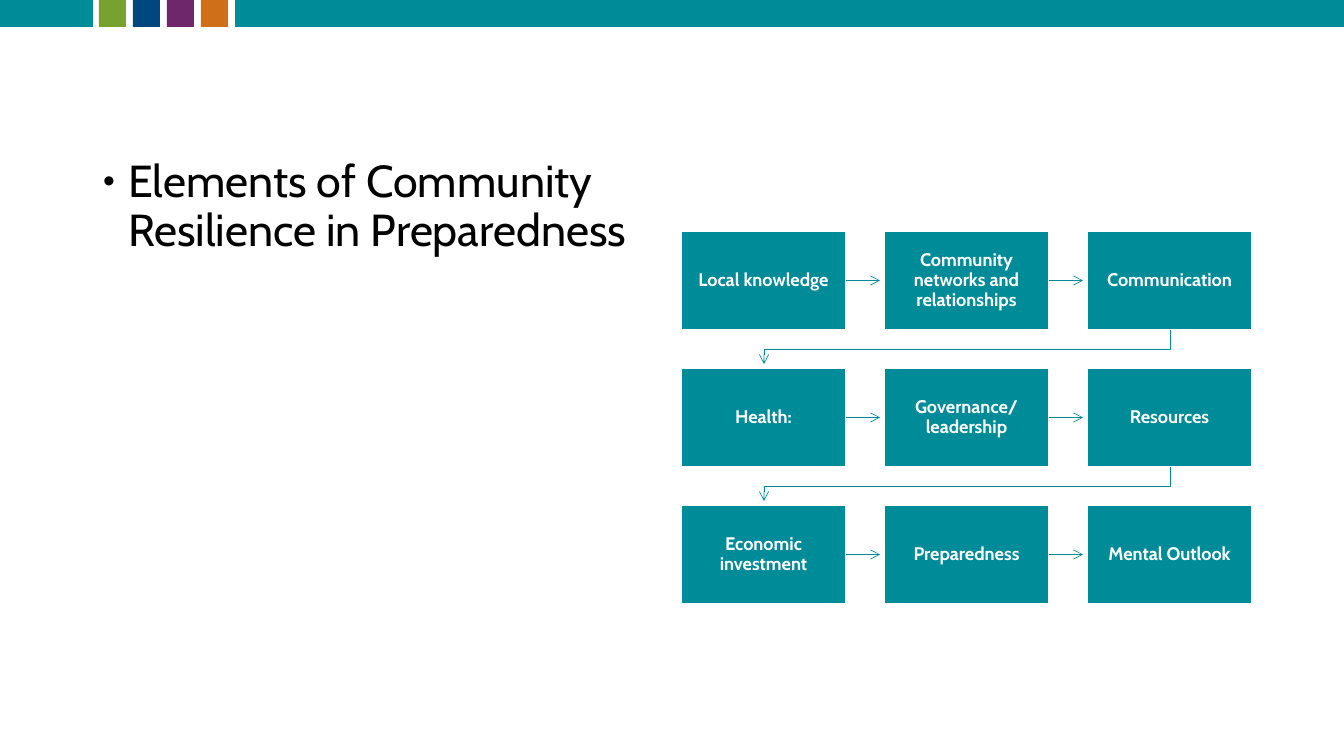
from lxml import etree
from pptx import Presentation
from pptx import util as u
from pptx.dml.color import RGBColor
from pptx.enum import shapes, text
from pptx.oxml.ns import qn

EMU_PER_PX = 914400 / 100.8
SLIDE_W, SLIDE_H = 1344, 756
FONT = "Cabin"
COLORS = {
    "teal": "008B99", "green": "78A22F", "blue": "00467F",
    "purple": "6D276A", "orange": "D06F1A", "white": "FFFFFF", "black": "000000",
}
ELEMENTS = [
    ["Local knowledge", "Community networks and relationships", "Communication"],
    ["Health:", "Governance/ leadership", "Resources"],
    ["Economic investment", "Preparedness", "Mental Outlook"],
]


def px(n):
    return u.Emu(round(n * EMU_PER_PX))


def rgb(name):
    return RGBColor.from_string(COLORS[name])


def set_font(paragraph, size, color, bold=False):
    for run in paragraph.runs:
        run.font.name = FONT
        run.font.size = u.Pt(size)
        run.font.bold = bold
        run.font.color.rgb = rgb(color)


def add_rect(slide, x, y, w, h, color):
    rect = slide.shapes.add_shape(shapes.MSO_SHAPE.RECTANGLE, px(x), px(y), px(w), px(h))
    rect.shadow.inherit = False
    rect.fill.solid()
    rect.fill.fore_color.rgb = rgb(color)
    rect.line.fill.background()
    return rect


def style_arrow(arrow):
    arrow.line.color.rgb = rgb("teal")
    arrow.line.width = u.Pt(0.5)
    props = arrow._element.spPr
    etree.SubElement(props.find(qn("a:ln")), qn("a:tailEnd"), type="arrow")
    etree.SubElement(props, qn("a:effectLst"))


def add_top_band(slide, x, y, w, h):
    # Teal ends with four coloured tiles between them
    lead, gap = 93, 7
    add_rect(slide, x, y, lead, h, "teal")
    tile_x = x + lead + gap - 1
    for color in ("green", "blue", "purple", "orange"):
        add_rect(slide, tile_x, y, h, h, color)
        tile_x += h + gap
    add_rect(slide, tile_x, y, x + w - tile_x, h, "teal")


def add_topic(slide, x, y, w, h):
    topic = slide.placeholders[1]
    topic.left, topic.top, topic.width, topic.height = px(x), px(y), px(w), px(h)
    frame = topic.text_frame
    frame.text = "Elements of Community Resilience in Preparedness"
    frame.word_wrap = True
    frame.auto_size = text.MSO_AUTO_SIZE.NONE
    frame.vertical_anchor = text.MSO_ANCHOR.TOP
    line = frame.paragraphs[0]
    props = line._p.get_or_add_pPr()
    props.set("marL", str(px(25)))
    props.set("indent", str(px(-25)))
    etree.SubElement(props, qn("a:buSzPct"), val="75000")
    etree.SubElement(props, qn("a:buFont"), typeface="Arial")
    etree.SubElement(props, qn("a:buChar"), char="•")
    line.alignment = text.PP_ALIGN.LEFT
    line.line_spacing = 0.9
    line.space_before = u.Pt(0)
    set_font(line, 32, "black")


def add_element(slide, x, y, w, h, label):
    element = add_rect(slide, x, y, w, h, "teal")
    element.line.color.rgb = rgb("white")
    element.line.width = u.Pt(1)
    frame = element.text_frame
    frame.word_wrap = True
    frame.vertical_anchor = text.MSO_ANCHOR.MIDDLE
    frame.margin_left = frame.margin_right = px(8)
    frame.margin_top = frame.margin_bottom = px(8)
    frame.text = label
    line = frame.paragraphs[0]
    line.alignment = text.PP_ALIGN.CENTER
    line.line_spacing = 0.9
    set_font(line, 13, "white", bold=True)
    return element


def add_element_flow(slide, x, y, w, h):
    box_w, box_h, arrow_len = 165, 99, 34
    pitch_x = (w - box_w) / (len(ELEMENTS[0]) - 1)
    pitch_y = (h - box_h) / (len(ELEMENTS) - 1)
    for row, labels in enumerate(ELEMENTS):
        top = y + row * pitch_y
        for col, label in enumerate(labels):
            left = x + col * pitch_x
            element = add_element(slide, left, top, box_w, box_h, label)
            # Arrow to the next element in the row
            if col < len(labels) - 1:
                right, middle = left + box_w, top + box_h / 2
                arrow = slide.shapes.add_connector(
                    shapes.MSO_CONNECTOR.STRAIGHT,
                    px(right), px(middle), px(right + arrow_len), px(middle))
                arrow.begin_connect(element, 3)
                style_arrow(arrow)
        # Stepped arrow back to the start of the next row
        if row < len(ELEMENTS) - 1:
            start_x, end_x = x + w - box_w / 2, x + box_w / 2
            bottom = top + box_h
            path = slide.shapes.build_freeform(start_x, bottom, scale=EMU_PER_PX)
            path.add_line_segments(
                [(start_x, bottom + 19), (end_x, bottom + 19), (end_x, bottom + arrow_len)],
                close=False)
            step = path.convert_to_shape()
            step.fill.background()
            style_arrow(step)


def main():
    prs = Presentation()
    prs.slide_width, prs.slide_height = px(SLIDE_W), px(SLIDE_H)
    slide = prs.slides.add_slide(prs.slide_layouts[1])
    # The topic sits in the body, so the title goes unused
    title = slide.shapes.title._element
    title.getparent().remove(title)
    add_top_band(slide, 0, 0, SLIDE_W, 27)
    add_topic(slide, 93, 154, 572, 527)
    add_element_flow(slide, 681, 231, 571, 373)
    prs.save("out.pptx")


if __name__ == "__main__":
    main()
